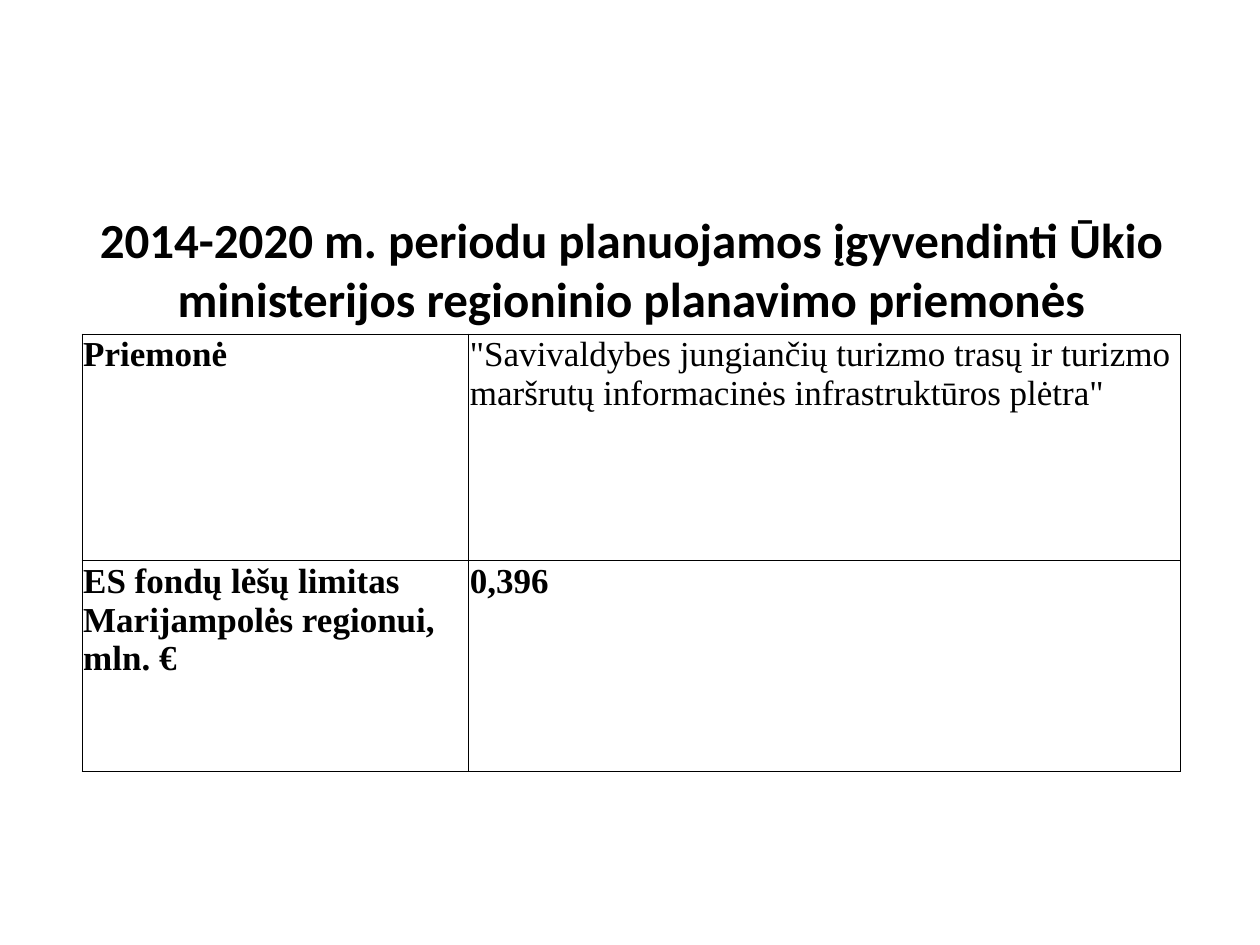
from typing import NamedTuple

import pptx
import pptx.dml.color
import pptx.enum.text
import pptx.oxml
import pptx.oxml.ns
import pptx.util

Inches = pptx.util.Inches
Pt = pptx.util.Pt
BLACK = pptx.dml.color.RGBColor(0, 0, 0)
COLS = (3.07, 5.65)
ROWS = (1.8, 1.67)
EDGE = 0.5


class Entry(NamedTuple):
    text: str
    bold: bool = True


GRID = (
    (Entry("Priemonė"),
     Entry('"Savivaldybes jungiančių turizmo trasų ir turizmo maršrutų '
           'informacinės infrastruktūros plėtra"', False)),
    (Entry("ES fondų lėšų limitas Marijampolės regionui, mln. €"),
     Entry("0,396")),
)


def style(para, name: str, size: float, bold: bool) -> None:
    font = para.runs[0].font
    form = {"name": name, "size": Pt(size), "bold": bold}
    for key, value in form.items():
        setattr(font, key, value)
    font.color.rgb = BLACK


def border(cell) -> None:
    """Line all four sides; the lines must come before the fill."""
    props = cell._tc.get_or_add_tcPr()
    for spot, side in enumerate(("lnL", "lnR", "lnT", "lnB")):
        line = pptx.oxml.parse_xml(
            f'<a:{side} {pptx.oxml.ns.nsdecls("a")} w="{Pt(EDGE)}">'
            f'<a:solidFill><a:srgbClr val="{BLACK}"/></a:solidFill></a:{side}>')
        props.insert(spot, line)


def fill_cell(cell, entry: Entry) -> None:
    cell.text = entry.text
    form = {"margin_left": 0.01, "margin_top": 0.01,
            "margin_right": 0.01, "margin_bottom": 0}
    for key, value in form.items():
        setattr(cell, key, Inches(value))
    cell.fill.background()
    border(cell)
    style(cell.text_frame.paragraphs[0], "Times New Roman", 20, entry.bold)


def add_title(slide) -> None:
    title = slide.shapes.title
    form = {"left": 0.51, "top": 1.78, "width": 9, "height": 0.7}
    for key, value in form.items():
        setattr(title, key, Inches(value))
    frame = title.text_frame
    frame.text = ("2014-2020 m. periodu planuojamos įgyvendinti Ūkio "
                  "ministerijos regioninio planavimo priemonės")
    frame.auto_size = pptx.enum.text.MSO_AUTO_SIZE.NONE
    frame.vertical_anchor = pptx.enum.text.MSO_ANCHOR.MIDDLE
    para = frame.paragraphs[0]
    para.alignment = pptx.enum.text.PP_ALIGN.CENTER
    style(para, "Calibri", 28, True)


def add_grid(slide) -> None:
    table = slide.shapes.add_table(
        len(ROWS), len(COLS), Inches(0.65), Inches(2.65),
        Inches(sum(COLS)), Inches(sum(ROWS))).table
    table.first_row = table.horz_banding = False
    for col, width in zip(table.columns, COLS):
        col.width = Inches(width)
    for row, height, line in zip(table.rows, ROWS, GRID):
        row.height = Inches(height)
        for cell, entry in zip(row.cells, line):
            fill_cell(cell, entry)


def main() -> None:
    deck = pptx.Presentation()
    deck.slide_width, deck.slide_height = Inches(10), Inches(7.5)
    slide = deck.slides.add_slide(deck.slide_layouts[5])
    add_title(slide)
    add_grid(slide)
    deck.save("out.pptx")


if __name__ == "__main__":
    main()
